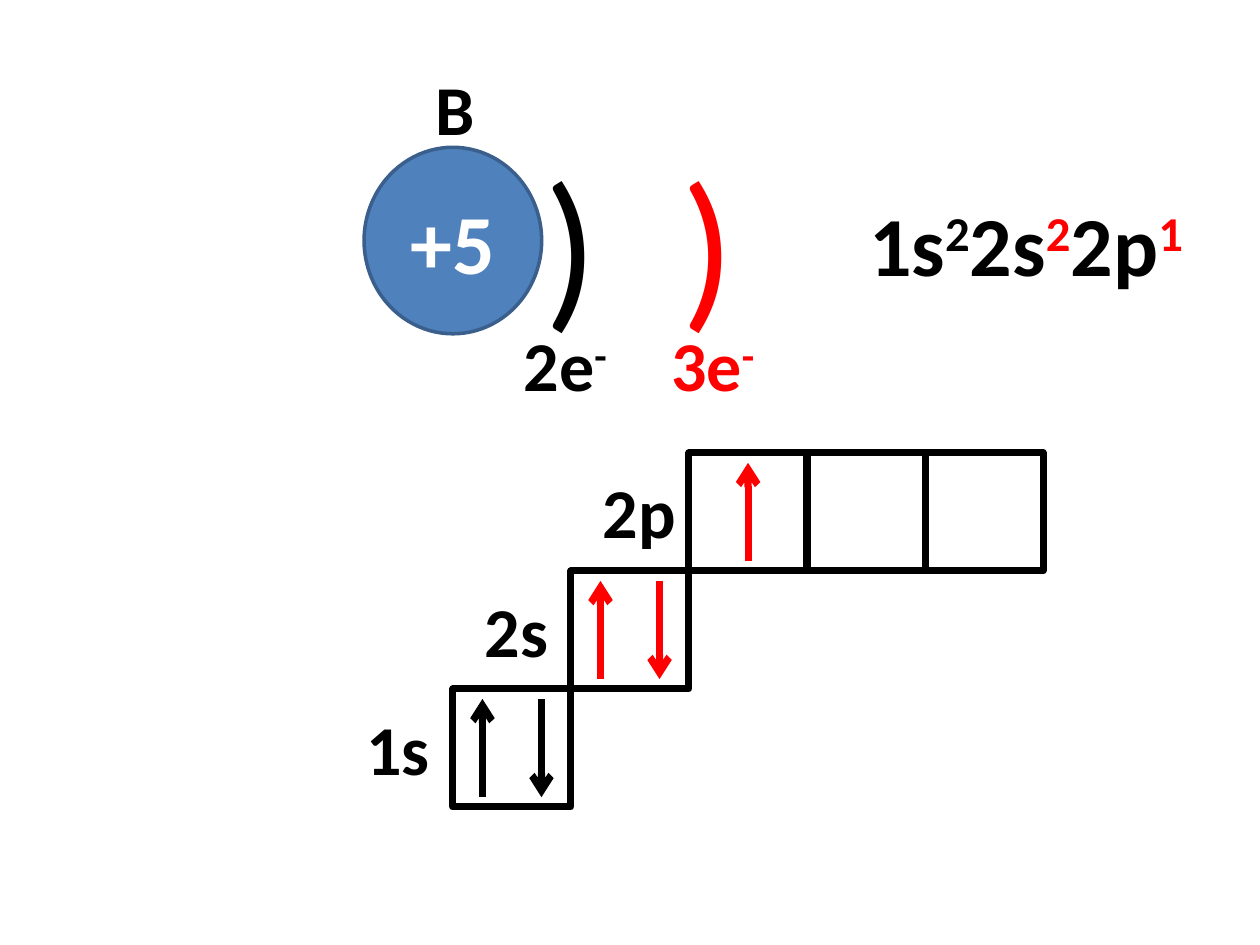
import pptx
import pptx.dml.color
import pptx.enum.shapes
import pptx.enum.text
import pptx.oxml
import pptx.oxml.ns
import pptx.util
from dataclasses import dataclass

Cm = pptx.util.Cm
Pt = pptx.util.Pt
Shape = pptx.enum.shapes.MSO_SHAPE


@dataclass(frozen=True)
class Theme:
    font: str = "Calibri"
    black: str = "000000"
    red: str = "FF0000"
    white: str = "FFFFFF"
    nucleus: str = "4F81BD"
    nucleus_edge: str = "3A5F8C"
    label_size: int = 40
    formula_size: int = 48
    shell_size: int = 100
    stroke: int = 4
    edge: int = 2


THEME = Theme()
CELL = 2.38
GRID_LEFT = 9.13
GRID_BOTTOM = 13.89
INSET = 0.2


def rgb(color):
    return pptx.dml.color.RGBColor.from_string(color)


def add_span(para, text, size, color, bold=True, raised=False):
    span = para.add_run()
    span.text = text
    span.font.name = THEME.font
    span.font.size = Pt(size)
    span.font.bold = bold
    span.font.color.rgb = rgb(color)
    if raised:
        span._r.get_or_add_rPr().set("baseline", "30000")


def add_label(page, text, left, top, width, height=1.96, size=THEME.label_size,
              color=THEME.black, bold=True, raised="", raised_color=None):
    add_rich_label(page, [(text, color, False), (raised, raised_color or color, True)],
                   left, top, width, height, size, bold)


def add_rich_label(page, parts, left, top, width, height, size, bold=True):
    box = page.shapes.add_textbox(Cm(left), Cm(top), Cm(width), Cm(height))
    frame = box.text_frame
    frame.word_wrap = False
    frame.auto_size = pptx.enum.text.MSO_AUTO_SIZE.SHAPE_TO_FIT_TEXT
    for text, color, raised in parts:
        if text:
            add_span(frame.paragraphs[0], text, size, color, bold, raised)


def add_outline(page, kind, left, top, width, height, line, weight, fill=None):
    shape = page.shapes.add_shape(kind, Cm(left), Cm(top), Cm(width), Cm(height))
    shape.shadow.inherit = False
    if fill:
        shape.fill.solid()
        shape.fill.fore_color.rgb = rgb(fill)
    else:
        shape.fill.background()
    shape.line.color.rgb = rgb(line)
    shape.line.width = Pt(weight)
    return shape


def add_nucleus(page, charge):
    shape = add_outline(page, Shape.OVAL, 7.34, 2.97, 3.58, 3.76,
                        THEME.nucleus_edge, THEME.edge, THEME.nucleus)
    shape.text_frame.vertical_anchor = pptx.enum.text.MSO_ANCHOR.MIDDLE
    para = shape.text_frame.paragraphs[0]
    para.alignment = pptx.enum.text.PP_ALIGN.CENTER
    add_span(para, charge, THEME.formula_size, THEME.white)


def add_shell(page, arc_left, label_left, count, color):
    add_label(page, ")", arc_left, 2.59, 1.6, 4.52, THEME.shell_size, color, bold=False)
    add_label(page, count, label_left, 6.35, 2.24, color=color, raised="-")


def add_electron(page, x, start, end, color):
    arrow = page.shapes.add_connector(pptx.enum.shapes.MSO_CONNECTOR.STRAIGHT,
                                      Cm(x), Cm(start), Cm(x), Cm(end))
    arrow.line.color.rgb = rgb(color)
    arrow.line.width = Pt(THEME.stroke)
    head = pptx.oxml.parse_xml(
        f'<a:tailEnd {pptx.oxml.ns.nsdecls("a")} type="arrow"/>')
    arrow.line._get_or_add_ln().append(head)
    effects = pptx.oxml.parse_xml(f'<a:effectLst {pptx.oxml.ns.nsdecls("a")}/>')
    arrow._element.spPr.append(effects)


def add_orbital(page, level, name, label_width, cells, electrons, color):
    left = GRID_LEFT + CELL * level
    top = GRID_BOTTOM - CELL * level
    add_label(page, name, left - 1.99, top + INSET, label_width)
    for index in range(cells):
        add_outline(page, Shape.RECTANGLE, left + CELL * index, top, CELL, CELL,
                    THEME.black, THEME.stroke)
    high, low = top + INSET, top + CELL - INSET
    if electrons == 1:
        add_electron(page, left + CELL / 2, low, high, color)
    else:
        add_electron(page, left + CELL / 4, low, high, color)
        add_electron(page, left + CELL * 3 / 4, high, low, color)


def main():
    deck = pptx.Presentation()
    deck.slide_width, deck.slide_height = Cm(25.4), Cm(19.05)
    page = deck.slides.add_slide(deck.slide_layouts.get_by_name("Blank"))

    add_nucleus(page, "+5")
    add_label(page, "B", 8.53, 1.19, 1.32)
    add_shell(page, 10.72, 10.31, "2e", THEME.black)
    add_shell(page, 13.49, 13.28, "3e", THEME.red)

    orbitals = [
        ("1s", 1.8, 1, 2, THEME.black),
        ("2s", 1.8, 1, 2, THEME.red),
        ("2p", 2.01, 3, 1, THEME.red),
    ]
    for level, orbital in enumerate(orbitals):
        add_orbital(page, level, *orbital)

    formula = [
        ("1s", THEME.black, False), ("2", THEME.black, True),
        ("2s", THEME.black, False), ("2", THEME.red, True),
        ("2p", THEME.black, False), ("1", THEME.red, True),
    ]
    add_rich_label(page, formula, 17.27, 3.76, 7.14, 2.31, THEME.formula_size)
    deck.save("out.pptx")


if __name__ == "__main__":
    main()
